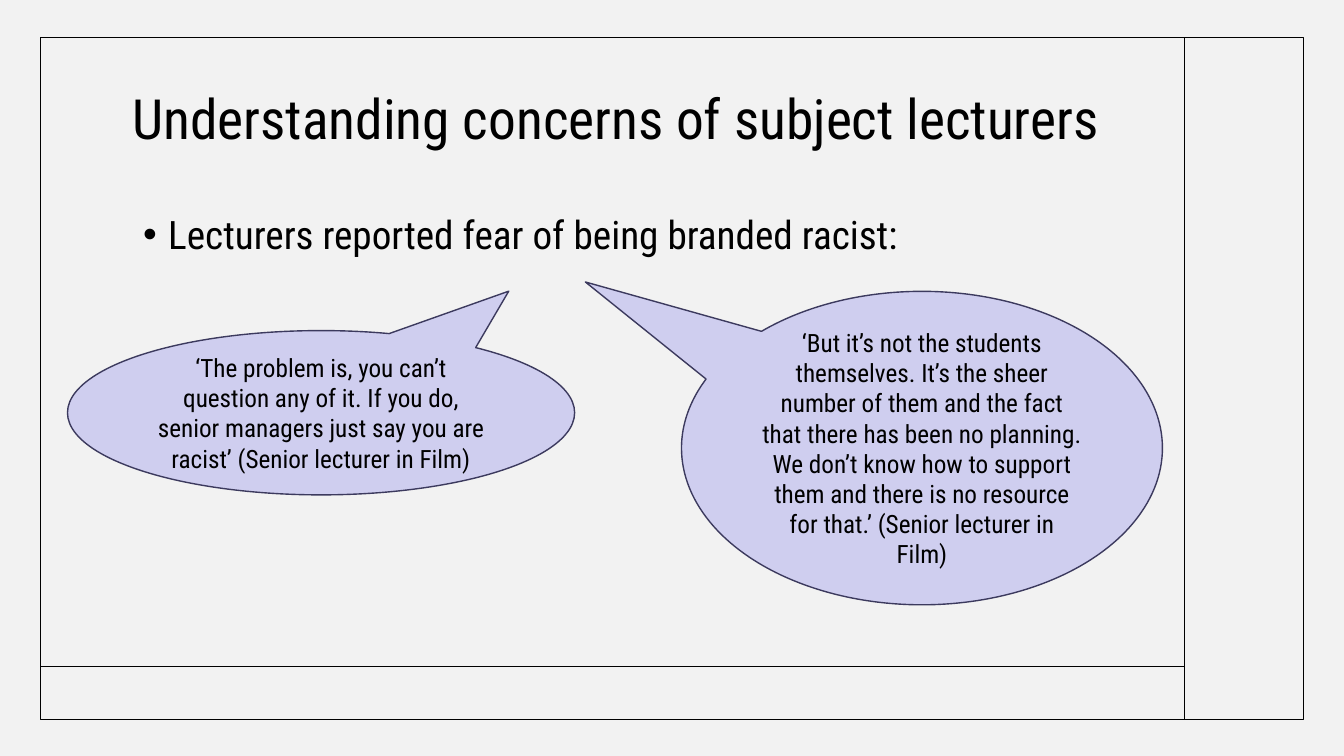
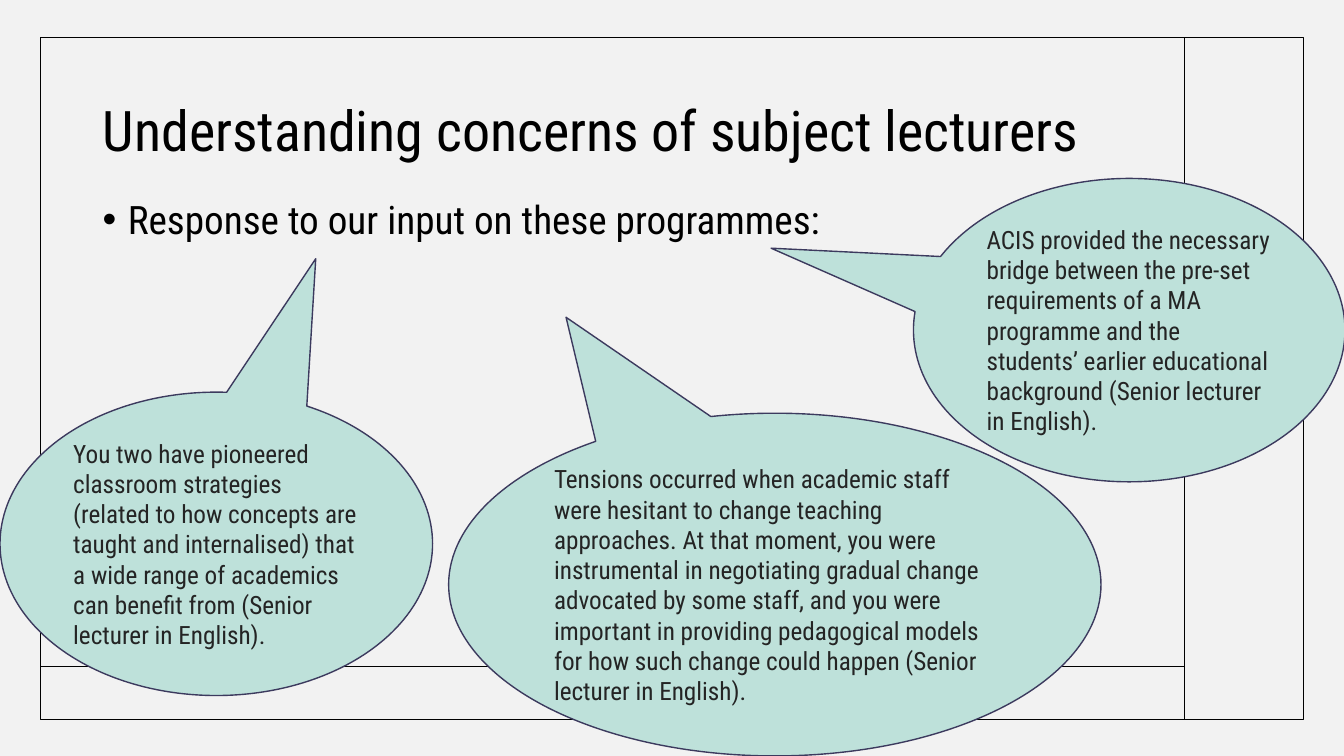
from dataclasses import dataclass

from lxml.etree import SubElement
from pptx import Presentation
from pptx.dml.color import RGBColor
from pptx.enum.shapes import MSO_CONNECTOR, MSO_SHAPE
from pptx.enum.text import MSO_ANCHOR, MSO_AUTO_SIZE, PP_ALIGN
from pptx.oxml.ns import qn
from pptx.util import Emu, Pt

EMU_PER_PX = 9144  # 100 px to the inch
TITLE_ONLY = 5


def px(*lengths):
    return [Emu(length * EMU_PER_PX) for length in lengths]


@dataclass(frozen=True)
class Theme:
    font: str = "Roboto Condensed"
    background: str = "F2F2F2"
    ink: str = "000000"
    soft_ink: str = "242424"
    concern: str = "CFCEEF"
    response: str = "BEE1DA"
    outline: str = "3C3A5E"
    title_size: float = 40
    body_size: float = 28
    quote_size: float = 18
    line_width: float = 1


class Deck:
    def __init__(self, theme):
        self.theme = theme
        self.prs = Presentation()
        self.prs.slide_width, self.prs.slide_height = px(1333, 750)
        self.slide = None
        self.fill(self.prs.slide_master.background.fill, theme.background)

    def fill(self, target, color):
        target.solid()
        target.fore_color.rgb = RGBColor.from_string(color)

    def stroke(self, line, color):
        self.fill(line.fill, color)
        line.width = Pt(self.theme.line_width)

    def add_text(self, frame, text, size, color, align, anchor):
        frame.word_wrap = True
        frame.auto_size = MSO_AUTO_SIZE.NONE
        frame.vertical_anchor = anchor
        paragraph = frame.paragraphs[0]
        paragraph.alignment = align
        run = paragraph.add_run()
        run.text = text
        run.font.name = self.theme.font
        run.font.size = Pt(size)
        run.font.color.rgb = RGBColor.from_string(color)
        return paragraph

    def rule(self, x1, y1, x2, y2):
        rule = self.slide.shapes.add_connector(MSO_CONNECTOR.STRAIGHT, *px(x1, y1, x2, y2))
        self.stroke(rule.line, self.theme.ink)
        SubElement(rule.element.spPr, qn("a:effectLst"))

    def frame(self):
        border = self.slide.shapes.add_shape(MSO_SHAPE.RECTANGLE, *px(40, 37, 1253, 677))
        border.shadow.inherit = False
        border.fill.background()
        self.stroke(border.line, self.theme.ink)
        self.rule(1175, 37, 1175, 713)
        self.rule(40, 661, 1175, 661)

    def new_slide(self, title, height, align, size=None):
        self.slide = self.prs.slides.add_slide(self.prs.slide_layouts[TITLE_ONLY])
        self.frame()
        heading = self.slide.shapes.title
        heading.left, heading.top, heading.width, heading.height = px(92, 60, 1038, height)
        paragraph = self.add_text(heading.text_frame, title, size or self.theme.title_size,
                                  self.theme.ink, align, MSO_ANCHOR.MIDDLE)
        paragraph.line_spacing = 0.9

    def bullet(self, box, text):
        body = self.slide.shapes.add_textbox(*px(*box))
        paragraph = self.add_text(body.text_frame, text, self.theme.body_size,
                                  self.theme.ink, PP_ALIGN.LEFT, MSO_ANCHOR.TOP)
        paragraph.line_spacing = 1.3
        paragraph.space_before = Pt(10)
        indent, = px(25)
        properties = paragraph._p.get_or_add_pPr()
        properties.set("marL", str(indent))
        properties.set("indent", str(-indent))
        SubElement(properties, qn("a:buFont"), typeface="Arial")
        SubElement(properties, qn("a:buChar"), char="•")

    def callout(self, box, tail, text, fill, ink, align):
        bubble = self.slide.shapes.add_shape(MSO_SHAPE.OVAL_CALLOUT, *px(*box))
        bubble.shadow.inherit = False
        bubble.adjustments[0], bubble.adjustments[1] = tail
        self.fill(bubble.fill, fill)
        self.stroke(bubble.line, self.theme.outline)
        self.add_text(bubble.text_frame, text, self.theme.quote_size, ink, align,
                      MSO_ANCHOR.MIDDLE)


TITLE = "Understanding concerns of subject lecturers"

# Each quote: bubble box, tail tip relative to the bubble's centre, wording
CONCERNS = [
    ((67, 328, 503, 163), (0.37, -0.74),
     "‘The problem is, you can’t question any of it. If you do, senior managers "
     "just say you are racist’ (Senior lecturer in Film)"),
    ((676, 289, 477, 311), (-0.7, -0.53),
     "‘But it’s not the students themselves. It’s the sheer number of them and the "
     "fact that there has been no planning. We don’t know how to support them and "
     "there is no resource for that.’ (Senior lecturer in Film)"),
]
RESPONSES = [
    ((0, 389, 429, 301), (0.23, -0.94),
     "You two have pioneered classroom strategies (related to how concepts are "
     "taught and internalised) that a wide range of academics can benefit from "
     "(Senior lecturer in English)."),
    ((445, 410, 647, 340), (-0.32, -0.78),
     "Tensions occurred when academic staff were hesitant to change teaching "
     "approaches. At that moment, you were instrumental in negotiating gradual "
     "change advocated by some staff, and you were important in providing "
     "pedagogical models for how such change could happen (Senior lecturer in "
     "English)."),
    ((906, 177, 428, 301), (-0.83, -0.27),
     "ACIS provided the necessary bridge between the pre-set requirements of a MA "
     "programme and the students’ earlier educational background (Senior lecturer "
     "in English)."),
]


def main():
    theme = Theme()
    deck = Deck(theme)

    # Concerns raised by lecturers
    deck.new_slide(TITLE, 121, PP_ALIGN.CENTER, size=39.6)
    deck.bullet((132, 190, 1038, 410), "Lecturers reported fear of being branded racist:")
    for box, tail, quote in CONCERNS:
        deck.callout(box, tail, quote, theme.concern, theme.ink, PP_ALIGN.CENTER)

    # Responses to the input
    deck.new_slide(TITLE, 145, PP_ALIGN.LEFT)
    deck.bullet((92, 175, 1038, 175), "Response to our input on these programmes:")
    for box, tail, quote in RESPONSES:
        deck.callout(box, tail, quote, theme.response, theme.soft_ink, PP_ALIGN.LEFT)

    deck.prs.save("out.pptx")


if __name__ == "__main__":
    main()
